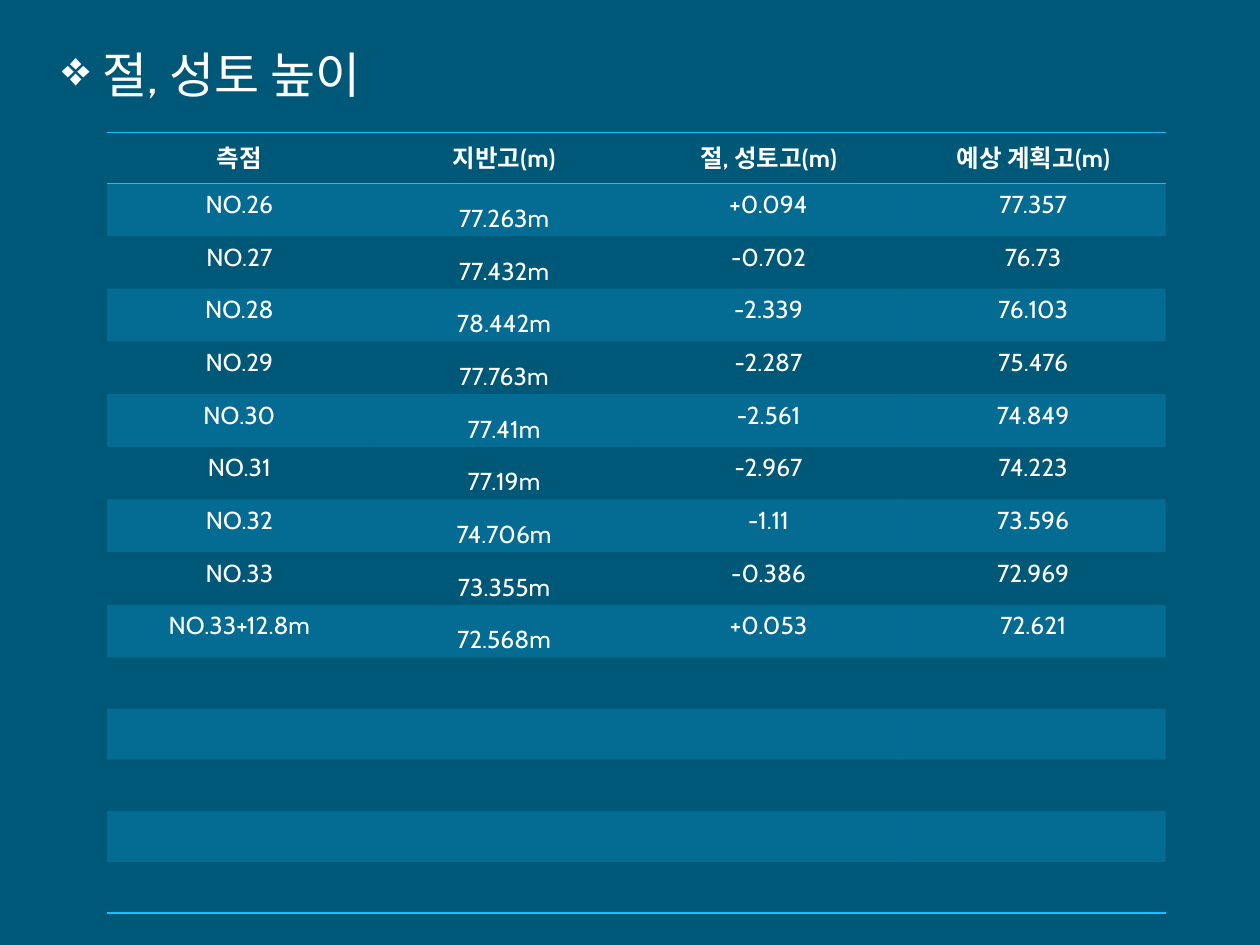
from lxml import etree
from pptx import Presentation
from pptx.dml.color import RGBColor
from pptx.enum.text import MSO_ANCHOR, PP_ALIGN
from pptx.oxml import parse_xml
from pptx.oxml.ns import nsdecls, qn
from pptx.util import Inches, Pt

LEFT, CENTER = PP_ALIGN.LEFT, PP_ALIGN.CENTER
MIDDLE = MSO_ANCHOR.MIDDLE
FONT = "Cabin"
BACKGROUND, WHITE, ACCENT = "005878", "FFFFFF", "15C0FF"
PLAIN_STYLE = "{2D5ABB26-0587-4C30-8999-92F81FD0307C}"
ROW_COUNT = 15
ELEVATION_COLUMN = 1
HEADINGS = ("측점", "지반고(m)", "절, 성토고(m)", "예상 계획고(m)")
STATIONS = (
    ("NO.26", "77.263m", "+0.094", "77.357"),
    ("NO.27", "77.432m", "-0.702", "76.73"),
    ("NO.28", "78.442m", "-2.339", "76.103"),
    ("NO.29", "77.763m", "-2.287", "75.476"),
    ("NO.30", "77.41m", "-2.561", "74.849"),
    ("NO.31", "77.19m", "-2.967", "74.223"),
    ("NO.32", "74.706m", "-1.11", "73.596"),
    ("NO.33", "73.355m", "-0.386", "72.969"),
    ("NO.33+12.8m", "72.568m", "+0.053", "72.621"),
)


def color(value):
    return RGBColor.from_string(value)


def format_text(paragraph, size, align, bold=False):
    paragraph.alignment = align
    for run in paragraph.runs:
        run.font.name = FONT
        run.font.size = Pt(size)
        run.font.bold = bold
        run.font.color.rgb = color(WHITE)


def add_title(slide, text):
    title = slide.shapes.title
    title.left, title.top = Inches(0.39), Inches(0.25)
    title.width, title.height = Inches(8.4), Inches(0.67)
    frame = title.text_frame
    frame.text = text
    frame.vertical_anchor = MIDDLE
    heading = frame.paragraphs[0]
    heading.space_before = Pt(4)
    format_text(heading, 28, LEFT)
    properties = heading._p.get_or_add_pPr()
    for old_bullet in properties.findall(qn("a:buNone")):
        properties.remove(old_bullet)
    etree.SubElement(properties, qn("a:buChar")).set("char", "❖")


def fill_band(cell):
    cell.fill.solid()
    cell.fill.fore_color.rgb = color(ACCENT)
    tint = cell._tc.tcPr.find(".//" + qn("a:srgbClr"))
    etree.SubElement(tint, qn("a:alpha")).set("val", "20000")


def add_borders(cell, sides):
    properties = cell._tc.get_or_add_tcPr()
    for position, side in enumerate(sides):
        properties.insert(position, parse_xml(
            f'<a:ln{side} {nsdecls("a")} w="12700"><a:solidFill>'
            f'<a:srgbClr val="{ACCENT}"/></a:solidFill></a:ln{side}>'))


def write_cell(cell, text, is_header, is_elevation):
    cell.text_frame.text = text
    entry = cell.text_frame.paragraphs[0]
    format_text(entry, 14, CENTER, is_header)
    if is_elevation:
        entry.line_spacing = 1.6
        cell.vertical_anchor = MIDDLE
        cell.margin_left = cell.margin_right = Inches(0.07)
        cell.margin_top = cell.margin_bottom = Inches(0.02)


def add_height_table(slide):
    table = slide.shapes.add_table(
        ROW_COUNT, len(HEADINGS),
        Inches(0.85), Inches(1.05), Inches(8.4), Inches(6.08)).table
    table._tbl.tblPr.find(qn("a:tableStyleId")).text = PLAIN_STYLE
    table.horz_banding = False
    contents = (HEADINGS,) + STATIONS
    borders = {0: "TB", ROW_COUNT - 1: "B"}
    for row_index, row in enumerate(table.rows):
        for column_index, cell in enumerate(row.cells):
            if row_index < len(contents):
                is_header = row_index == 0
                write_cell(cell, contents[row_index][column_index], is_header,
                           column_index == ELEVATION_COLUMN and not is_header)
            if row_index % 2:
                fill_band(cell)
            else:
                cell.fill.background()
            add_borders(cell, borders.get(row_index, ""))


def main():
    presentation = Presentation()
    presentation.slide_width = Inches(10)
    presentation.slide_height = Inches(7.5)
    slide = presentation.slides.add_slide(presentation.slide_layouts[5])
    slide.background.fill.solid()
    slide.background.fill.fore_color.rgb = color(BACKGROUND)
    add_title(slide, " 절, 성토 높이")
    add_height_table(slide)
    presentation.save("out.pptx")


if __name__ == "__main__":
    main()
